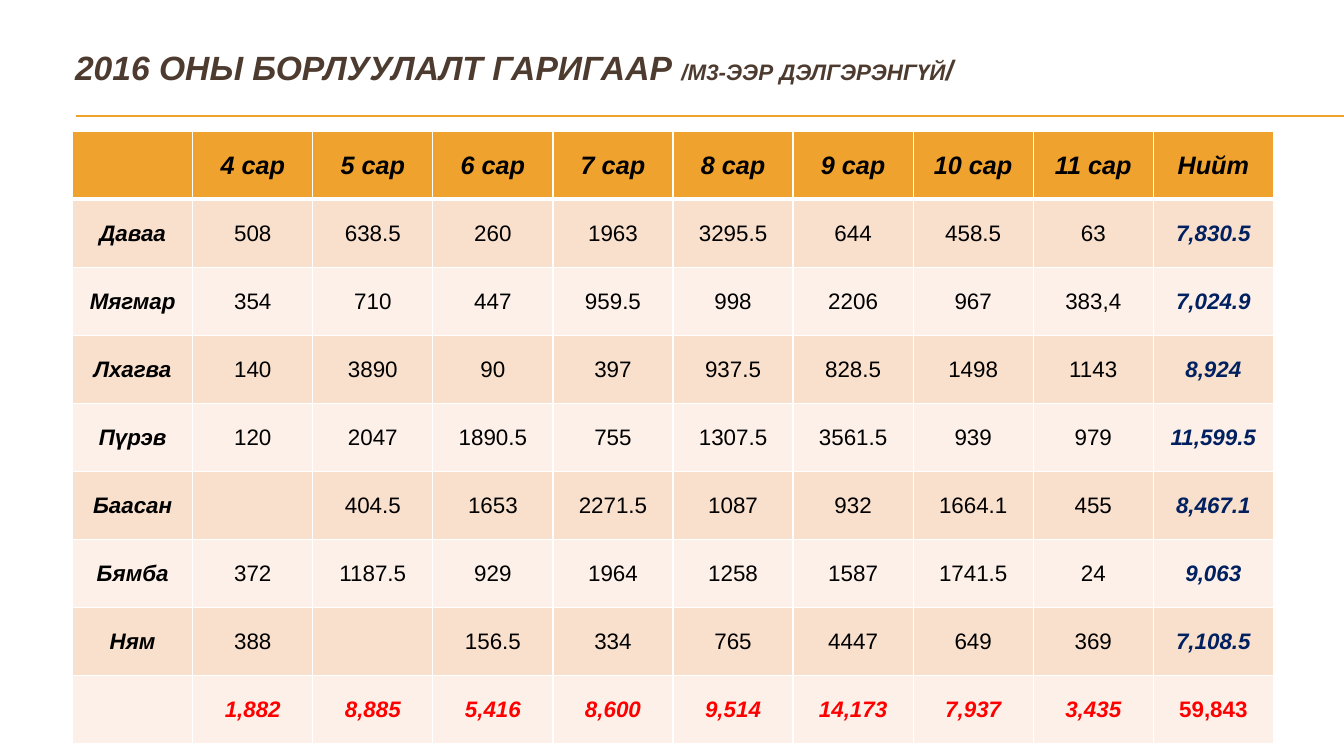
from dataclasses import dataclass
from typing import Any

from lxml import etree
from pptx import Presentation
from pptx import util as u
from pptx.dml.color import RGBColor
from pptx.enum import shapes, text
from pptx.oxml import ns


@dataclass(frozen=True)
class Theme:
    font: str = "Arial"
    accent: str = "F0A22E"
    bands: tuple[str, str] = ("F9E0CD", "FCF0E8")
    border: str = "FFFFFF"
    title: str = "4E3B30"
    ink: str = "000000"
    row_total: str = "002060"
    column_total: str = "FF0000"
    title_size: int = 24
    subtitle_size: int = 16
    slash_size: int = 20
    header_size: int = 18
    body_size: int = 16
    rule_width: float = 0.75
    border_width: int = 1
    header_border_width: int = 3


@dataclass(frozen=True)
class TextStyle:
    size: int
    color: str
    bold: bool = True
    italic: bool = True


@dataclass(frozen=True)
class Box:
    left: float
    top: float
    width: float
    height: float


@dataclass(frozen=True)
class SalesRow:
    label: str
    months: str
    total: str

    def cells(self) -> list[str]:
        return [self.label, *self.months.split("|"), self.total]


THEME = Theme()
SLIDE_WIDTH, SLIDE_HEIGHT = u.Inches(13.33), u.Inches(7.5)
TITLE_BOX = Box(0.42 / 13.33, 0.42 / 7.5, 9.36 / 13.33, 0.5 / 7.5)
TABLE_BOX = Box(0.72 / 13.33, 1.3 / 7.5, 11.91 / 13.33, 6.08 / 7.5)
RULE_LEFT = 0.75 / 13.33
RULE_TOPS = (1.15 / 7.5, 1.16 / 7.5)

TITLE_STYLE = TextStyle(THEME.title_size, THEME.title)
TITLE_RUNS = (
    ("2016 ОНЫ БОРЛУУЛАЛТ ГАРИГААР ", TITLE_STYLE),
    ("/М3-ЭЭР ДЭЛГЭРЭНГҮЙ", TextStyle(THEME.subtitle_size, THEME.title)),
    ("/", TextStyle(THEME.slash_size, THEME.title)),
)
SALES = (
    SalesRow("", "|".join(f"{month} сар" for month in range(4, 12)), "Нийт"),
    SalesRow("Даваа", "508|638.5|260|1963|3295.5|644|458.5|63", "7,830.5"),
    SalesRow("Мягмар", "354|710|447|959.5|998|2206|967|383,4", "7,024.9"),
    SalesRow("Лхагва", "140|3890|90|397|937.5|828.5|1498|1143", "8,924"),
    SalesRow("Пүрэв", "120|2047|1890.5|755|1307.5|3561.5|939|979", "11,599.5"),
    SalesRow("Баасан", "|404.5|1653|2271.5|1087|932|1664.1|455", "8,467.1"),
    SalesRow("Бямба", "372|1187.5|929|1964|1258|1587|1741.5|24", "9,063"),
    SalesRow("Ням", "388||156.5|334|765|4447|649|369", "7,108.5"),
    SalesRow("", "1,882|8,885|5,416|8,600|9,514|14,173|7,937|3,435", "59,843"),
)
LAST_ROW = len(SALES) - 1
LAST_COLUMN = len(SALES[0].cells()) - 1


def across(share: float) -> int:
    return round(SLIDE_WIDTH * share)


def down(share: float) -> int:
    return round(SLIDE_HEIGHT * share)


def place(box: Box) -> tuple[int, int, int, int]:
    return across(box.left), down(box.top), across(box.width), down(box.height)


def apply(target: Any, values: dict[str, Any]) -> None:
    for name, value in values.items():
        setattr(target, name, value)


def add_run(paragraph: Any, content: str, style: TextStyle) -> None:
    run = paragraph.add_run()
    run.text = content
    apply(run.font, {
        "name": THEME.font,
        "size": u.Pt(style.size),
        "bold": style.bold,
        "italic": style.italic,
    })
    run.font.color.rgb = RGBColor.from_string(style.color)


def add_rule(slide: Any, top: float) -> None:
    rule = slide.shapes.add_connector(
        shapes.MSO_CONNECTOR.STRAIGHT,
        across(RULE_LEFT), down(top), SLIDE_WIDTH, down(top))
    rule.line.color.rgb = RGBColor.from_string(THEME.accent)
    rule.line.width = u.Pt(THEME.rule_width)
    etree.SubElement(rule.element.spPr, ns.qn("a:effectLst"))


def add_title(slide: Any) -> None:
    frame = slide.shapes.add_textbox(*place(TITLE_BOX)).text_frame
    apply(frame, {"word_wrap": True, "vertical_anchor": text.MSO_ANCHOR.MIDDLE})
    paragraph = frame.paragraphs[0]
    paragraph.alignment = text.PP_ALIGN.CENTER
    for content, style in TITLE_RUNS:
        add_run(paragraph, content, style)


def cell_style(row: int, column: int) -> TextStyle:
    if row == 0:
        return TextStyle(THEME.header_size, THEME.ink)
    if row == LAST_ROW:
        return TextStyle(THEME.body_size, THEME.column_total, italic=column < LAST_COLUMN)
    if column == LAST_COLUMN:
        return TextStyle(THEME.body_size, THEME.row_total)
    is_label = column == 0
    return TextStyle(THEME.body_size, THEME.ink, is_label, is_label)


def add_borders(cell: Any, row: int) -> None:
    properties = cell._tc.get_or_add_tcPr()
    thick_side = {0: "lnB", 1: "lnT"}.get(row)
    for side in ("lnL", "lnR", "lnT", "lnB"):
        width = THEME.header_border_width if side == thick_side else THEME.border_width
        line = etree.SubElement(properties, ns.qn(f"a:{side}"), w=str(u.Pt(width)))
        fill = etree.SubElement(line, ns.qn("a:solidFill"))
        etree.SubElement(fill, ns.qn("a:srgbClr"), val=THEME.border)


def format_cell(cell: Any, row: int, column: int, content: str) -> None:
    apply(cell, {
        "vertical_anchor": text.MSO_ANCHOR.MIDDLE,
        "margin_left": u.Inches(0.01),
        "margin_right": u.Inches(0.01),
        "margin_top": u.Inches(0.01),
        "margin_bottom": 0,
    })
    add_borders(cell, row)
    cell.fill.solid()
    color = THEME.accent if row == 0 else THEME.bands[(row - 1) % 2]
    cell.fill.fore_color.rgb = RGBColor.from_string(color)
    paragraph = cell.text_frame.paragraphs[0]
    paragraph.alignment = text.PP_ALIGN.CENTER
    if content:
        add_run(paragraph, content, cell_style(row, column))


def add_sales_table(slide: Any) -> None:
    table = slide.shapes.add_table(
        len(SALES), LAST_COLUMN + 1, *place(TABLE_BOX)).table
    for row, sales in enumerate(SALES):
        for column, content in enumerate(sales.cells()):
            format_cell(table.cell(row, column), row, column, content)


def main() -> None:
    presentation = Presentation()
    apply(presentation, {"slide_width": SLIDE_WIDTH, "slide_height": SLIDE_HEIGHT})
    slide = presentation.slides.add_slide(presentation.slide_layouts[6])
    for top in RULE_TOPS:
        add_rule(slide, top)
    add_sales_table(slide)
    add_title(slide)
    presentation.save("out.pptx")


if __name__ == "__main__":
    main()
